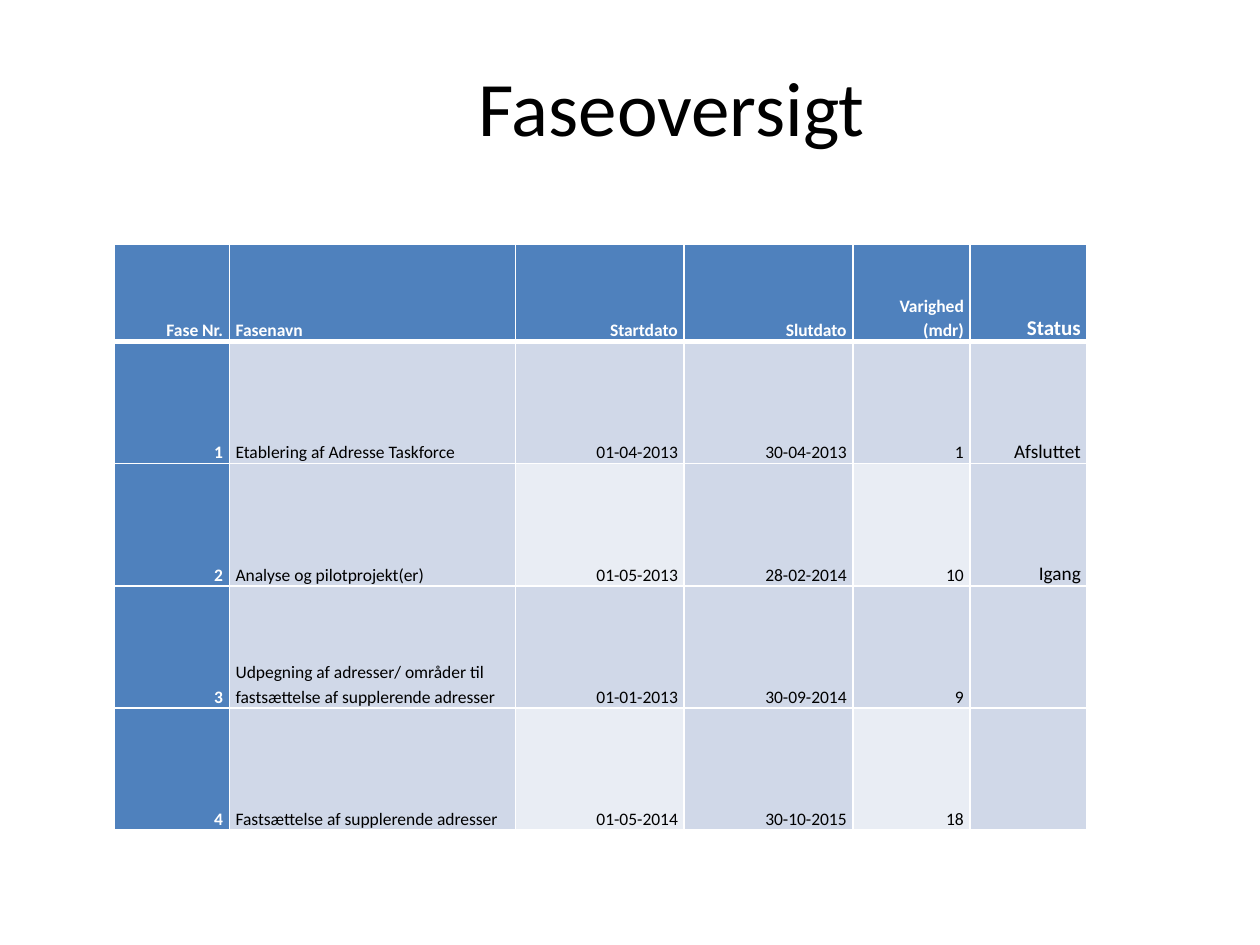
"""Build the phase overview slide with its schedule table."""
from lxml import etree
from pptx import Presentation
from pptx.dml.color import RGBColor
from pptx.enum import text
from pptx.oxml import ns
from pptx.util import Inches, Pt

TITLE = "Faseoversigt"
HEADER = ["Fase Nr.", "Fasenavn", "Startdato", "Slutdato", "Varighed (mdr)", "Status"]
PHASES = [
    ["1", "Etablering af Adresse Taskforce", "01-04-2013", "30-04-2013", "1", "Afsluttet"],
    ["2", "Analyse og pilotprojekt(er)", "01-05-2013", "28-02-2014", "10", "Igang"],
    ["3", "Udpegning af adresser/ områder til fastsættelse af supplerende adresser",
     "01-01-2013", "30-09-2014", "9", ""],
    ["4", "Fastsættelse af supplerende adresser", "01-05-2014", "30-10-2015", "18", ""],
]
COL_WIDTHS = [0.91, 2.27, 1.34, 1.34, 0.93, 0.93]
ROW_HEIGHTS = [0.77] + [0.97] * len(PHASES)
NAME_COL, STATUS_COL = 1, 5
LIGHT_COLS = (2, 4)

THEME = {
    "font": "Calibri", "ink": "000000", "white": "FFFFFF",
    "accent": "4F81BD", "band": "D0D8E8", "light": "E9EDF4",
    "title": 44, "body": 10, "status_head": 12, "status": 11,
    "line": 1, "head_line": 3, "spacing": 14,
}
CELL_FORMAT = {
    "margin_left": Inches(0.05), "margin_right": Inches(0.05),
    "margin_top": 0, "margin_bottom": 0,
    "vertical_anchor": text.MSO_ANCHOR.BOTTOM,
}
TITLE_FORMAT = {"word_wrap": True, "vertical_anchor": text.MSO_ANCHOR.MIDDLE}


def apply(target, values):
    for name, value in values.items():
        setattr(target, name, value)


def write(p, content, size, color, align, bold=False):
    p.alignment = align
    if content:
        p.add_run().text = content
    for font in [p.font] + [r.font for r in p.runs]:
        apply(font, {"name": THEME["font"], "size": Pt(size), "bold": bold})
        font.color.rgb = RGBColor.from_string(color)


def add_border(cell, side, width):
    tc_pr = cell._tc.get_or_add_tcPr()
    ln = etree.SubElement(tc_pr, ns.qn(f"a:ln{side}"), w=str(Pt(width)))
    fill = etree.SubElement(ln, ns.qn("a:solidFill"))
    etree.SubElement(fill, ns.qn("a:srgbClr"), val=THEME["white"])


def format_cell(cell, row, col, content):
    head = row == 0
    strong = head or col == 0
    thick_side = {0: "B", 1: "T"}.get(row)
    apply(cell, CELL_FORMAT)
    for side in "LRTB":
        add_border(cell, side, THEME["head_line" if side == thick_side else "line"])

    light = row % 2 == 0 and col in LIGHT_COLS
    fill = "accent" if strong else "light" if light else "band"
    cell.fill.solid()
    cell.fill.fore_color.rgb = RGBColor.from_string(THEME[fill])

    size = "body"
    if col == STATUS_COL:
        size = "status_head" if head else "status"
    align = text.PP_ALIGN.LEFT if col == NAME_COL else text.PP_ALIGN.RIGHT
    p = cell.text_frame.paragraphs[0]
    p.line_spacing = Pt(THEME["spacing"])
    write(p, content, THEME[size], THEME["white" if strong else "ink"], align, strong)


def add_title(s):
    sp = s.shapes.add_textbox(Inches(0.83), Inches(0.21), Inches(9), Inches(1.25))
    tf = sp.text_frame
    apply(tf, TITLE_FORMAT)
    write(tf.paragraphs[0], TITLE, THEME["title"], THEME["ink"], text.PP_ALIGN.CENTER)


def add_schedule(s):
    rows = [HEADER] + PHASES
    table = s.shapes.add_table(
        len(rows), len(HEADER), Inches(0.91), Inches(1.94),
        Inches(sum(COL_WIDTHS)), Inches(sum(ROW_HEIGHTS))).table
    apply(table, {"first_col": True, "horz_banding": False})
    for column, width in zip(table.columns, COL_WIDTHS):
        column.width = Inches(width)
    for i, (row, height) in enumerate(zip(rows, ROW_HEIGHTS)):
        table.rows[i].height = Inches(height)
        for j, content in enumerate(row):
            format_cell(table.cell(i, j), i, j, content)


def main():
    prs = Presentation()
    apply(prs, {"slide_width": Inches(10), "slide_height": Inches(7.5)})
    s = prs.slides.add_slide(prs.slide_layouts[6])
    add_title(s)
    add_schedule(s)
    prs.save("out.pptx")


if __name__ == "__main__":
    main()
